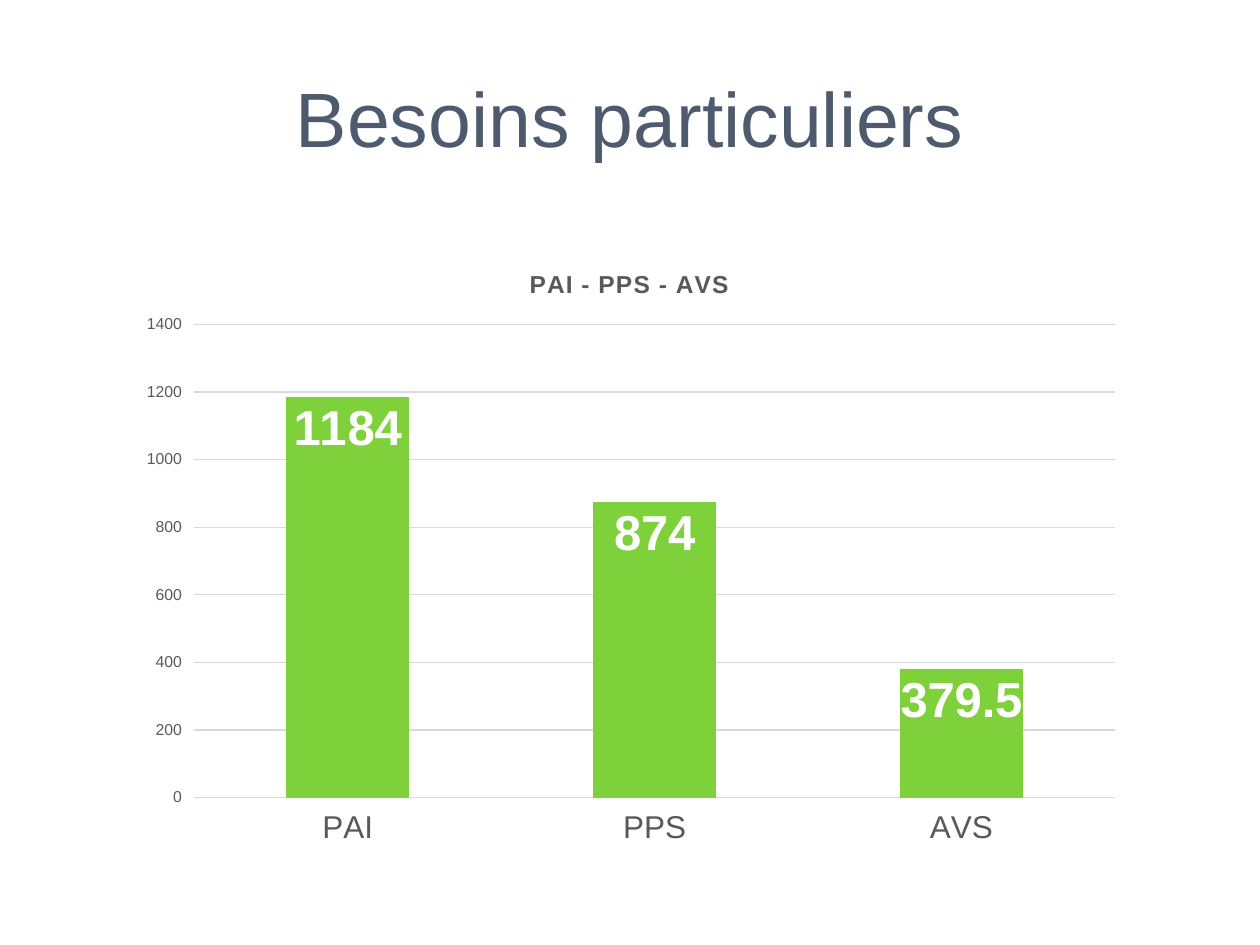
from dataclasses import dataclass

from lxml import etree
from pptx import Presentation
from pptx.chart.data import CategoryChartData
from pptx.dml.color import RGBColor
from pptx.enum.chart import XL_CHART_TYPE, XL_LABEL_POSITION, XL_TICK_MARK
from pptx.enum.text import MSO_ANCHOR, PP_ALIGN
from pptx.oxml import parse_xml
from pptx.oxml.ns import nsdecls
from pptx.util import Inches, Pt

COLUMN_STACKED = XL_CHART_TYPE.COLUMN_STACKED
INSIDE_END = XL_LABEL_POSITION.INSIDE_END
TICK_OUTSIDE = XL_TICK_MARK.OUTSIDE
TICK_NONE = XL_TICK_MARK.NONE
MIDDLE = MSO_ANCHOR.MIDDLE
CENTER = PP_ALIGN.CENTER
BLANK_LAYOUT = 6


@dataclass(frozen=True)
class Theme:
    font: str = "Arial"
    heading: str = "4E5B6F"
    chart_text: str = "595959"
    grid: str = "D9D9D9"
    bar: str = "7FD13B"
    bar_label: str = "FFFFFF"
    heading_size: int = 44
    chart_title_size: int = 14
    category_size: int = 18
    value_size: int = 9
    label_size: int = 28


THEME = Theme()
NEEDS = {"PAI": 1184, "PPS": 874, "AVS": 379.5}


def style_font(font, size, color, bold=False):
    font.name = THEME.font
    font.size = Pt(size)
    font.bold = bold
    font.color.rgb = RGBColor.from_string(color)


def add_heading(page, text):
    box = page.shapes.add_textbox(Inches(0.5), Inches(0.3), Inches(9), Inches(1.25))
    frame = box.text_frame
    frame.word_wrap = True
    frame.vertical_anchor = MIDDLE
    frame.text = text
    para = frame.paragraphs[0]
    para.alignment = CENTER
    style_font(para.runs[0].font, THEME.heading_size, THEME.heading)


def style_axis(axis, size):
    axis.major_tick_mark = TICK_OUTSIDE
    axis.minor_tick_mark = TICK_NONE
    axis.format.line.fill.background()
    style_font(axis.tick_labels.font, size, THEME.chart_text)


def set_chart_title(chart, text):
    frame = chart.chart_title.text_frame
    frame.text = text
    span = frame.paragraphs[0].runs[0]
    style_font(span.font, THEME.chart_title_size, THEME.chart_text, bold=True)
    span.font._element.set("spc", "50")
    chart.chart_title.include_in_layout = False


def place_plot(chart, x, y, w, h):
    """Fix the inner plot area, in fractions of the chart's size."""
    plot_area = chart._chartSpace.chart.plotArea
    for old in plot_area.xpath("c:layout"):
        plot_area.remove(old)
    layout = parse_xml(f"<c:layout {nsdecls('c')}><c:manualLayout/></c:layout>")
    settings = {"layoutTarget": "inner", "xMode": "edge", "yMode": "edge",
                "x": x, "y": y, "w": w, "h": h}
    for name, value in settings.items():
        tag = f"{{{layout.nsmap['c']}}}{name}"
        etree.SubElement(layout[0], tag).set("val", str(value))
    plot_area.insert(0, layout)


def add_needs_chart(page):
    data = CategoryChartData()
    data.categories = list(NEEDS)
    data.add_series("Series 1", list(NEEDS.values()))
    chart = page.shapes.add_chart(
        COLUMN_STACKED, Inches(0.98), Inches(1.94), Inches(8.03), Inches(4.88), data
    ).chart
    chart.has_legend = False
    chart.font.name = THEME.font
    chart.font.size = Pt(10)
    set_chart_title(chart, "PAI - PPS - AVS")
    place_plot(chart, 0.07, 0.13, 0.91, 0.77)

    style_axis(chart.category_axis, THEME.category_size)
    values = chart.value_axis
    style_axis(values, THEME.value_size)
    values.minimum_scale, values.maximum_scale, values.major_unit = 0, 1400, 200
    values.has_major_gridlines = True
    grid = values.major_gridlines.format.line
    grid.color.rgb = RGBColor.from_string(THEME.grid)
    grid.width = Pt(0.75)

    plot = chart.plots[0]
    plot.gap_width, plot.overlap = 150, 100
    plot.vary_by_categories = False
    series = plot.series[0]
    series.format.fill.solid()
    series.format.fill.fore_color.rgb = RGBColor.from_string(THEME.bar)
    labels = series.data_labels
    labels.show_value = True
    labels.position = INSIDE_END
    style_font(labels.font, THEME.label_size, THEME.bar_label, bold=True)


def main():
    deck = Presentation()
    deck.slide_width, deck.slide_height = Inches(10), Inches(7.5)
    page = deck.slides.add_slide(deck.slide_layouts[BLANK_LAYOUT])
    add_heading(page, "Besoins particuliers")
    add_needs_chart(page)
    deck.save("out.pptx")


if __name__ == "__main__":
    main()
